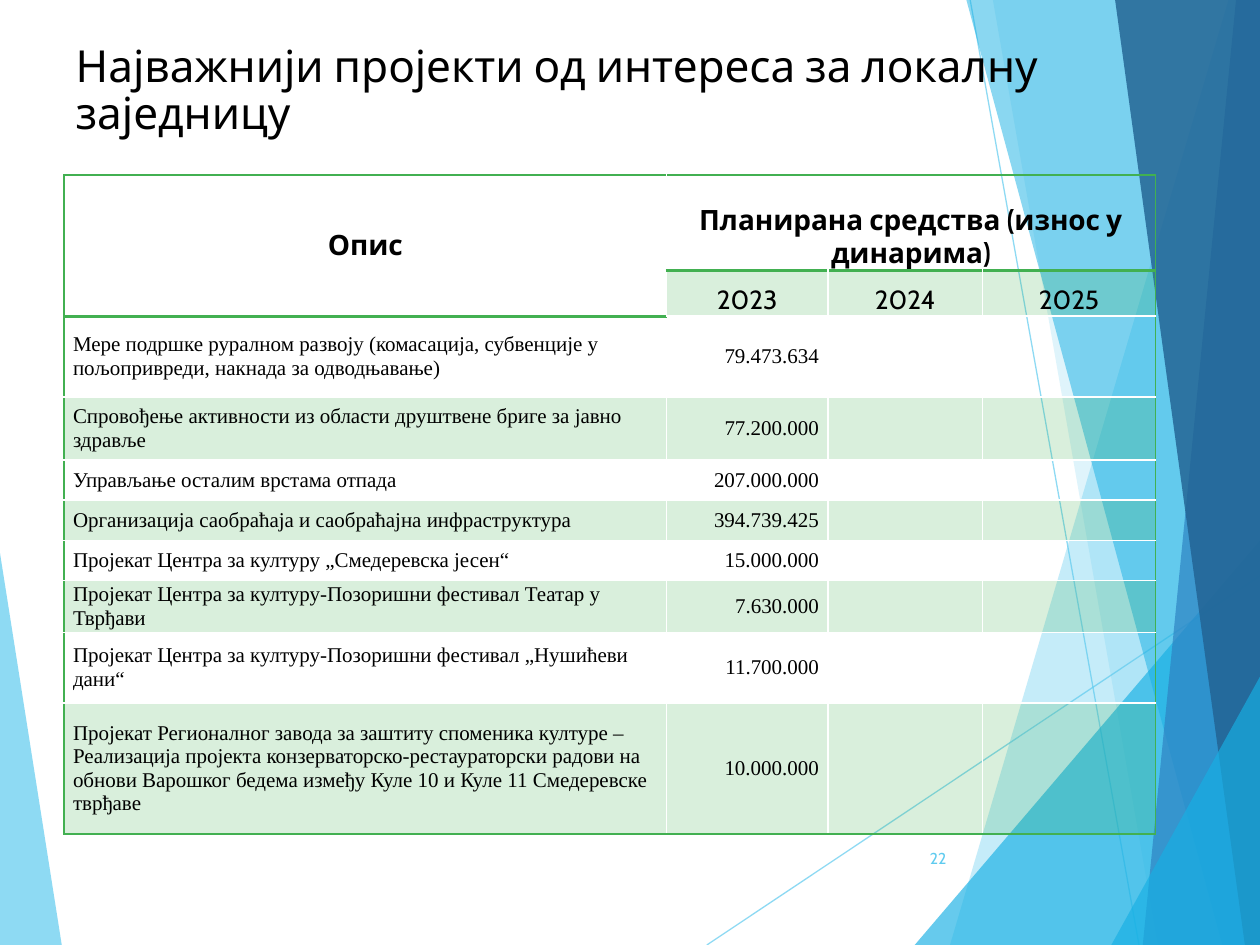
from lxml import etree
from pptx import Presentation
from pptx import util as u
from pptx.dml.color import RGBColor
from pptx.enum import text
from pptx.oxml import ns

BLACK = RGBColor(0x00, 0x00, 0x00)
GREEN = RGBColor(0x42, 0xB0, 0x51)
SKY = RGBColor(0x5F, 0xCB, 0xEF)
CYAN = RGBColor(0x17, 0xB0, 0xE4)
BLUE = RGBColor(0x2E, 0x83, 0xC3)
NAVY = RGBColor(0x22, 0x62, 0x92)

LEFT, CENTER, RIGHT = text.PP_ALIGN.LEFT, text.PP_ALIGN.CENTER, text.PP_ALIGN.RIGHT
TOP, MIDDLE, BOTTOM = (text.MSO_ANCHOR.TOP, text.MSO_ANCHOR.MIDDLE,
                       text.MSO_ANCHOR.BOTTOM)

TITLE = dict(name="Cabin", size=u.Pt(25.2))
HEADING = dict(name="Cabin", size=u.Pt(16), bold=True)
YEAR = dict(name="Cabin", size=u.Pt(15), bold=False)
BODY = dict(name="Times New Roman", size=u.Pt(12), bold=False)
NUMBER = dict(name="Cabin", size=u.Pt(9))

# corner points, colour, opacity in percent
LEFT_WEDGE = ([(0, 4.39), (0.49, 7.5), (0, 7.5)], SKY, 70)
RAYS = [((5.61, 7.5), (10, 4.57)), ((7.7, 0), (9.04, 7.5))]
RIGHT_FACETS = [
    ([(9.75, 0), (7.54, 7.5), (10, 7.5), (10, 0)], SKY, 36),
    ([(7.88, 0), (9.19, 7.5), (10, 7.5), (10, 0)], SKY, 20),
    ([(7.26, 7.5), (10, 4.29), (10, 7.5)], CYAN, 66),
    ([(7.67, 0), (9.7, 7.5), (10, 7.5), (10, 0)], CYAN, 50),
    ([(9.81, 0), (9.07, 7.5), (10, 7.5), (10, 0)], BLUE, 70),
    ([(8.85, 0), (9.88, 7.5), (10, 7.5), (10, 0)], NAVY, 82),
    ([(8.82, 7.5), (10, 5.37), (10, 7.5)], CYAN, 66),
]

COLUMN_WIDTHS = [4.78, 1.28, 1.23, 1.37]
ROW_HEIGHTS = [0.76, 0.36, 0.64, 0.5, 0.32, 0.32, 0.32, 0.41, 0.56, 1.04]
YEARS = ["2023", "2024", "2025"]
PROJECTS = [
    ("Мере подршке руралном развоју (комасација, субвенције у пољопривреди, "
     "накнада за одводњавање)", "79.473.634"),
    ("Спровођење активности из области друштвене бриге за јавно здравље",
     "77.200.000"),
    ("Управљање осталим врстама отпада", "207.000.000"),
    ("Организација саобраћаја и саобраћајна инфраструктура", "394.739.425"),
    ("Пројекат Центра за културу „Смедеревска јесен“", "15.000.000"),
    ("Пројекат Центра за културу-Позоришни фестивал Театар у Тврђави",
     "7.630.000"),
    ("Пројекат Центра за културу-Позоришни фестивал „Нушићеви дани“",
     "11.700.000"),
    ("Пројекат Регионалног завода за заштиту споменика културе –Реализација "
     "пројекта конзерваторско-рестаураторски радови на обнови Варошког бедема "
     "између Куле 10 и Куле 11 Смедеревске тврђаве", "10.000.000"),
]


def set_opacity(element, percent):
    for color in element.iter(ns.qn("a:srgbClr")):
        etree.SubElement(color, ns.qn("a:alpha"), val=str(percent * 1000))


class Deck:
    def __init__(self, width, height):
        self.presentation = Presentation()
        self.presentation.slide_width = u.Inches(width)
        self.presentation.slide_height = u.Inches(height)
        layout = self.presentation.slide_layouts[5]
        self.slide = self.presentation.slides.add_slide(layout)
        self.shapes = self.slide.shapes

    def add_words(self, frame, words, style, align=LEFT, color=BLACK):
        paragraph = frame.paragraphs[0]
        paragraph.alignment = align
        run = paragraph.add_run()
        run.text = words
        for attribute, value in style.items():
            setattr(run.font, attribute, value)
        run.font.color.rgb = color
        return paragraph

    def facet(self, points, color, opacity):
        corners = [(u.Inches(x), u.Inches(y)) for x, y in points]
        builder = self.shapes.build_freeform(*corners[0])
        builder.add_line_segments(corners[1:], close=True)
        facet = builder.convert_to_shape()
        facet.shadow.inherit = False
        facet.fill.solid()
        facet.fill.fore_color.rgb = color
        set_opacity(facet._element.spPr, opacity)
        facet.line.fill.background()

    def ray(self, start, end):
        ends = [u.Inches(value) for value in (*start, *end)]
        ray = self.shapes.add_connector(1, *ends)
        ray.line.color.rgb = SKY
        ray.line.width = u.Pt(0.75)
        properties = ray._element.spPr
        set_opacity(properties, 70)
        etree.SubElement(properties, ns.qn("a:effectLst"))

    def title(self, words, left, top, width, height):
        title = self.shapes.title
        place = dict(left=left, top=top, width=width, height=height)
        for attribute, value in place.items():
            setattr(title, attribute, u.Inches(value))
        frame = title.text_frame
        frame.word_wrap = True
        frame.auto_size = text.MSO_AUTO_SIZE.NONE
        frame.vertical_anchor = TOP
        self.add_words(frame, words, TITLE).line_spacing = 0.9
        # the title stands in front of the facets
        self.shapes._spTree.append(title._element)

    def label(self, words, left, top, width, height):
        box = self.shapes.add_textbox(*map(u.Inches, (left, top, width, height)))
        box.text_frame.word_wrap = True
        box.text_frame.vertical_anchor = MIDDLE
        self.add_words(box.text_frame, words, NUMBER, RIGHT, SKY)

    def borders(self, cell, widths):
        """Draw the given edges, a dict of L, R, T, B in that order to points."""
        properties = cell._tc.get_or_add_tcPr()
        for index, (edge, points) in enumerate(widths.items()):
            line = etree.Element(ns.qn(f"a:ln{edge}"), w=str(u.Pt(points)))
            fill = etree.SubElement(line, ns.qn("a:solidFill"))
            etree.SubElement(fill, ns.qn("a:srgbClr"), val=str(GREEN))
            properties.insert(index, line)

    def format_cell(self, cell, row, column):
        cell.margin_left = cell.margin_right = u.Inches(0.07)
        cell.margin_top = cell.margin_bottom = 0
        cell.vertical_anchor = MIDDLE
        if row % 2 and (row > 1 or column > 0):
            cell.fill.solid()
            cell.fill.fore_color.rgb = GREEN
            set_opacity(cell._tc.tcPr, 20)
        else:
            cell.fill.background()
        # each inner edge belongs to the cell on its left or above it
        widths = {"L": 1} if column == 0 else {}
        widths["R"] = 1
        if row == 0:
            widths["T"] = 1
        widths["B"] = 2 if row == 0 or (row, column) == (1, 0) else 1
        self.borders(cell, widths)

    def project_table(self, left, top):
        size = sum(COLUMN_WIDTHS), sum(ROW_HEIGHTS)
        table = self.shapes.add_table(
            len(ROW_HEIGHTS), len(COLUMN_WIDTHS),
            *map(u.Inches, (left, top, *size))).table
        table.first_row = table.horz_banding = False
        for column, width in zip(table.columns, COLUMN_WIDTHS):
            column.width = u.Inches(width)
        for row, height in zip(table.rows, ROW_HEIGHTS):
            row.height = u.Inches(height)
        for row in range(len(ROW_HEIGHTS)):
            for column in range(len(COLUMN_WIDTHS)):
                self.format_cell(table.cell(row, column), row, column)

        description, funds = table.cell(0, 0), table.cell(0, 1)
        description.merge(table.cell(1, 0))
        funds.merge(table.cell(0, 3))
        funds.vertical_anchor = BOTTOM
        self.add_words(description.text_frame, "Опис", HEADING, CENTER)
        self.add_words(funds.text_frame, "Планирана средства (износ у динарима)",
                       HEADING, CENTER)
        for column, year in enumerate(YEARS, 1):
            cell = table.cell(1, column)
            cell.vertical_anchor = BOTTOM
            self.add_words(cell.text_frame, year, YEAR, CENTER)
        for row, (project, amount) in enumerate(PROJECTS, 2):
            self.add_words(table.cell(row, 0).text_frame, project, BODY)
            self.add_words(table.cell(row, 1).text_frame, amount, BODY, RIGHT)


def main():
    deck = Deck(10, 7.5)
    deck.facet(*LEFT_WEDGE)
    for start, end in RAYS:
        deck.ray(start, end)
    for facet in RIGHT_FACETS:
        deck.facet(*facet)
    deck.title("Најважнији пројекти од интереса за локалну заједницу",
               0.5, 0.3, 9, 0.77)
    deck.project_table(0.51, 1.39)
    deck.label("22", 7.05, 6.61, 0.56, 0.4)
    deck.presentation.save("out.pptx")


if __name__ == "__main__":
    main()
